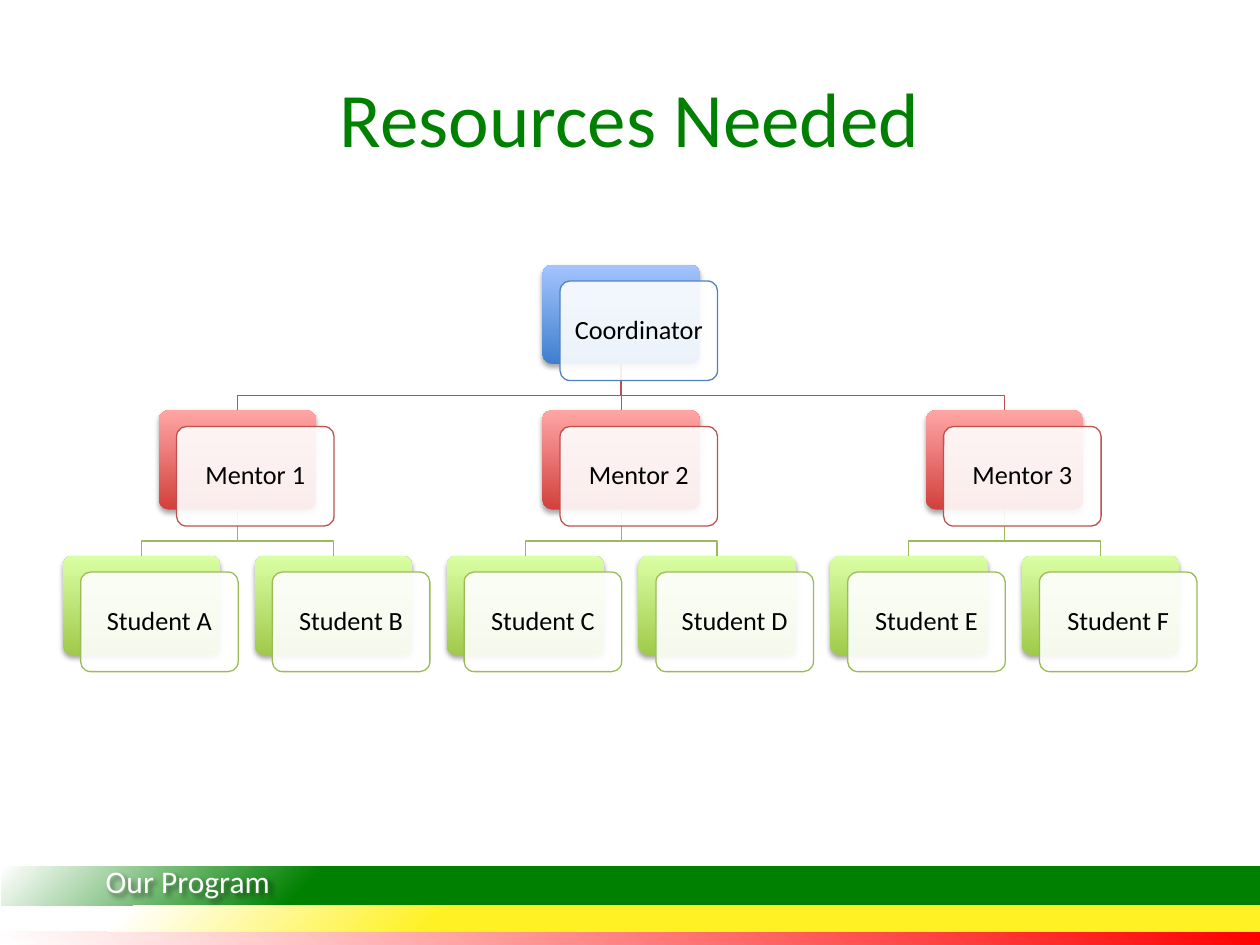
from lxml import etree
from pptx import Presentation
from pptx.dml.color import RGBColor as RGB
from pptx.enum.shapes import MSO_CONNECTOR as Link, MSO_SHAPE as Kind
from pptx.enum.text import MSO_ANCHOR as Anchor, PP_ALIGN as Align
from pptx.oxml import parse_xml
from pptx.oxml.ns import qn
from pptx.util import Inches, Pt

GREEN, WHITE, BLACK = RGB(0, 128, 0), RGB(255, 255, 255), RGB(0, 0, 0)
RED, YELLOW = RGB(255, 0, 0), RGB(255, 241, 35)
FONT = "Calibri"
NS = 'xmlns:a="http://schemas.openxmlformats.org/drawingml/2006/main"'

# Content: (name, children)
TITLE = "Resources Needed"
FOOTER = "Our Program"
TREE = ("Coordinator", [
    ("Mentor 1", [("Student A", []), ("Student B", [])]),
    ("Mentor 2", [("Student C", []), ("Student D", [])]),
    ("Mentor 3", [("Student E", []), ("Student F", [])]),
])

# Per level: line colour, gradient from bottom to top
LEVELS = [
    (RGB(0x4F, 0x81, 0xBD), RGB(0x3F, 0x7F, 0xCE), RGB(0xA4, 0xC4, 0xFF)),
    (RGB(0xC0, 0x50, 0x4D), RGB(0xD1, 0x40, 0x3C), RGB(0xFF, 0xA6, 0xA5)),
    (RGB(0x9B, 0xBB, 0x59), RGB(0xA0, 0xCA, 0x4A), RGB(0xDA, 0xFF, 0xA5)),
]
# Footer bands: top, height, colour, stops, focus edges
BANDS = [
    (7.39, 0.12, RED, (0, 100), 'l="100000" b="100000"'),
    (6.88, 0.31, GREEN, (75, 100), 'l="100000" t="100000"'),
    (7.19, 0.2, YELLOW, (65, 90), 'l="100000" t="100000"'),
]

# Grid of the chart, in inches
LEFT, TOP, WIDE, HIGH = 0.5, 2.1, 1.25, 0.79
SHIFT_X, SHIFT_Y = 0.14, 0.13
COL, ROW = (9 - WIDE - SHIFT_X) / 5, 1.155
BEND = 0.25

prs = Presentation()
prs.slide_width, prs.slide_height = Inches(10), Inches(7.5)
slide = prs.slides.add_slide(prs.slide_layouts[5])
shapes = slide.shapes


def write(shape, text, size, color, align=Align.CENTER, anchor=Anchor.MIDDLE,
          inset=None, space=None):
    frame = shape.text_frame
    frame.word_wrap, frame.vertical_anchor = True, anchor
    if inset is not None:
        frame.margin_left = frame.margin_right = Inches(inset)
        frame.margin_top = frame.margin_bottom = Inches(inset)
    para = frame.paragraphs[0]
    para.alignment, para.line_spacing = align, space
    run = para.add_run()
    run.text = text
    run.font.name, run.font.size = FONT, Pt(size)
    run.font.color.rgb = color


def box(kind, x, y, w, h):
    shape = shapes.add_shape(kind, *map(Inches, (x, y, w, h)))
    shape.shadow.inherit = False
    shape.line.fill.background()
    if kind == Kind.ROUNDED_RECTANGLE:
        shape.adjustments[0] = 0.1
    return shape


def blend(shape, stops, shade):
    """Gradient fill; stops are (percent, colour)."""
    marks = "".join(f'<a:gs pos="{pos * 1000}"><a:srgbClr val="{color}"/></a:gs>'
                    for pos, color in stops)
    grad = parse_xml(f'<a:gradFill {NS} rotWithShape="1">'
                     f'<a:gsLst>{marks}</a:gsLst>{shade}</a:gradFill>')
    shape.element.spPr.find(qn("a:prstGeom")).addnext(grad)


def cast(shape, blur, dist, turn, alpha):
    """Outer shadow in black."""
    shape.shadow.inherit = False
    shape.element.spPr.find(qn("a:effectLst")).append(parse_xml(
        f'<a:outerShdw {NS} blurRad="{Pt(blur)}" dist="{Pt(dist)}" '
        f'dir="{turn * 60000}" rotWithShape="0"><a:srgbClr val="000000">'
        f'<a:alpha val="{alpha * 1000}"/></a:srgbClr></a:outerShdw>'))


def place(node, level=0, first=0):
    """Give each node its column; a parent sits midway over its children."""
    name, kids = node
    placed, col = [], first
    for kid in kids:
        placed.append(place(kid, level + 1, col))
        col = placed[-1]["end"]
    mid = (placed[0]["col"] + placed[-1]["col"]) / 2 if kids else first
    return dict(name=name, kids=placed, level=level, col=mid,
                end=col if kids else first + 1,
                x=LEFT + mid * COL, y=TOP + level * ROW)


def join(node):
    """Lines run behind the cards, from parent to child."""
    x, y = node["x"] + WIDE / 2, node["y"] + HIGH
    for kid in node["kids"]:
        end, low = kid["x"] + WIDE / 2, kid["y"]
        if kid["col"] == node["col"]:
            line = shapes.add_connector(Link.STRAIGHT,
                                        *map(Inches, (x, y, end, low)))
            etree.SubElement(line.element.spPr, qn("a:effectLst"))
            straight.append((line, node, kid))
        else:
            pts = [(Inches(a), Inches(b)) for a, b in
                   ((x, y), (x, y + BEND), (end, y + BEND), (end, low))]
            pen = shapes.build_freeform(*pts[0])
            pen.add_line_segments(pts[1:], close=False)
            line = pen.convert_to_shape()
            line.fill.background()
            line.shadow.inherit = False
        line.line.color.rgb = LEVELS[kid["level"]][0]
        line.line.width = Pt(0.75)
        join(kid)


def card(node):
    edge, dark, light = LEVELS[node["level"]]
    back = box(Kind.ROUNDED_RECTANGLE, node["x"], node["y"], WIDE, HIGH)
    blend(back, [(0, dark), (100, light)], '<a:lin ang="16200000" scaled="0"/>')
    cast(back, 3.1, 1.8, 90, 35)
    node["back"] = back

    front = box(Kind.ROUNDED_RECTANGLE, node["x"] + SHIFT_X,
                node["y"] + SHIFT_Y, WIDE, HIGH)
    front.fill.solid()
    front.fill.fore_color.rgb = WHITE
    tint = front.element.spPr.find(qn("a:solidFill"))[0]
    etree.SubElement(tint, qn("a:alpha"), val="90000")
    front.line.color.rgb, front.line.width = edge, Pt(0.75)
    write(front, node["name"], 15, BLACK, inset=0.06, space=0.9)
    for kid in node["kids"]:
        card(kid)


# Title
title = shapes.title
title.left, title.top, title.width, title.height = map(Inches, (0.5, 0.3, 9, 1.25))
write(title, TITLE, 44, GREEN)

# Organisation chart
straight = []
root = place(TREE)
join(root)
card(root)
for line, node, kid in straight:
    line.begin_connect(node["back"], 2)
    line.end_connect(kid["back"], 0)

# Footer bands and label
for top, high, color, (near, far), focus in BANDS:
    band = box(Kind.RECTANGLE, 0.01, top, 10, high)
    blend(band, [(near, color), (far, WHITE)],
          f'<a:path path="circle"><a:fillToRect {focus}/></a:path>')
label = shapes.add_textbox(*map(Inches, (0.74, 6.79, 1.92, 0.4)))
write(label, FOOTER, 18, WHITE, align=Align.LEFT, anchor=Anchor.TOP)
cast(label, 3, 3, 45, 45)

prs.save("out.pptx")
